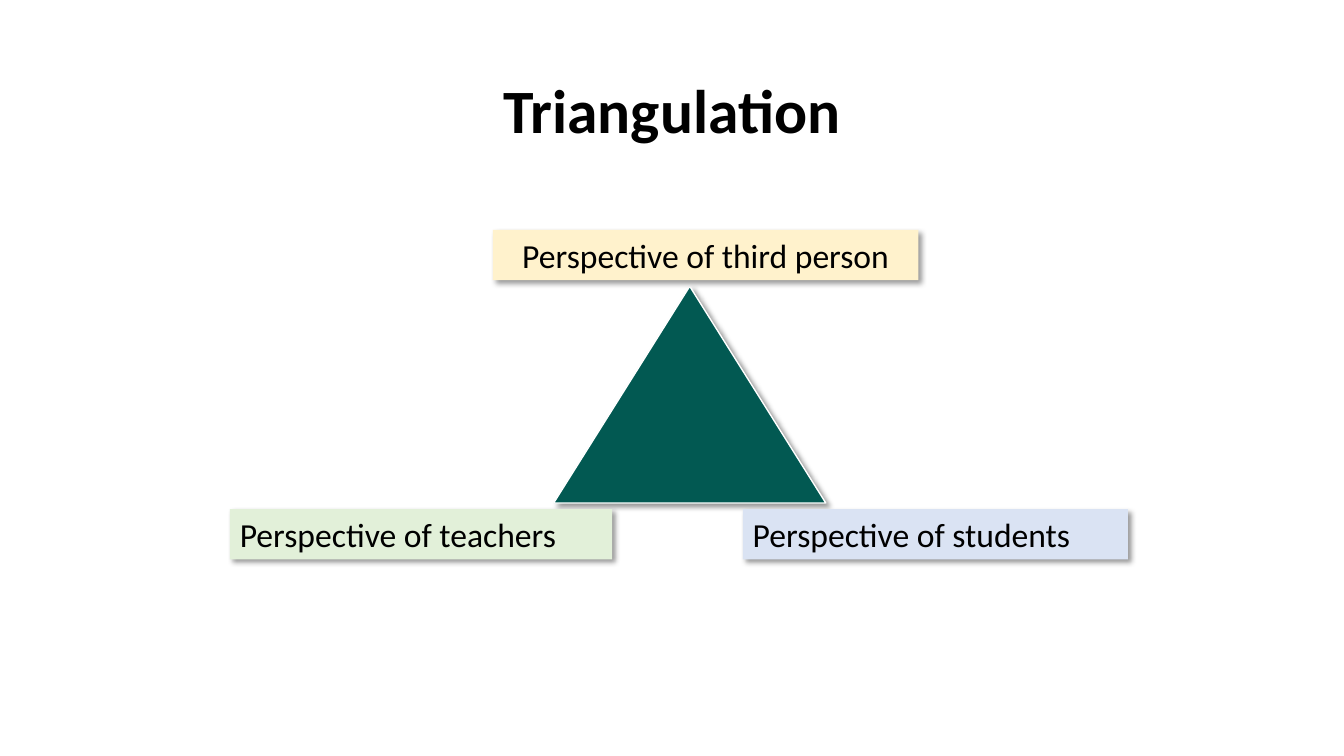
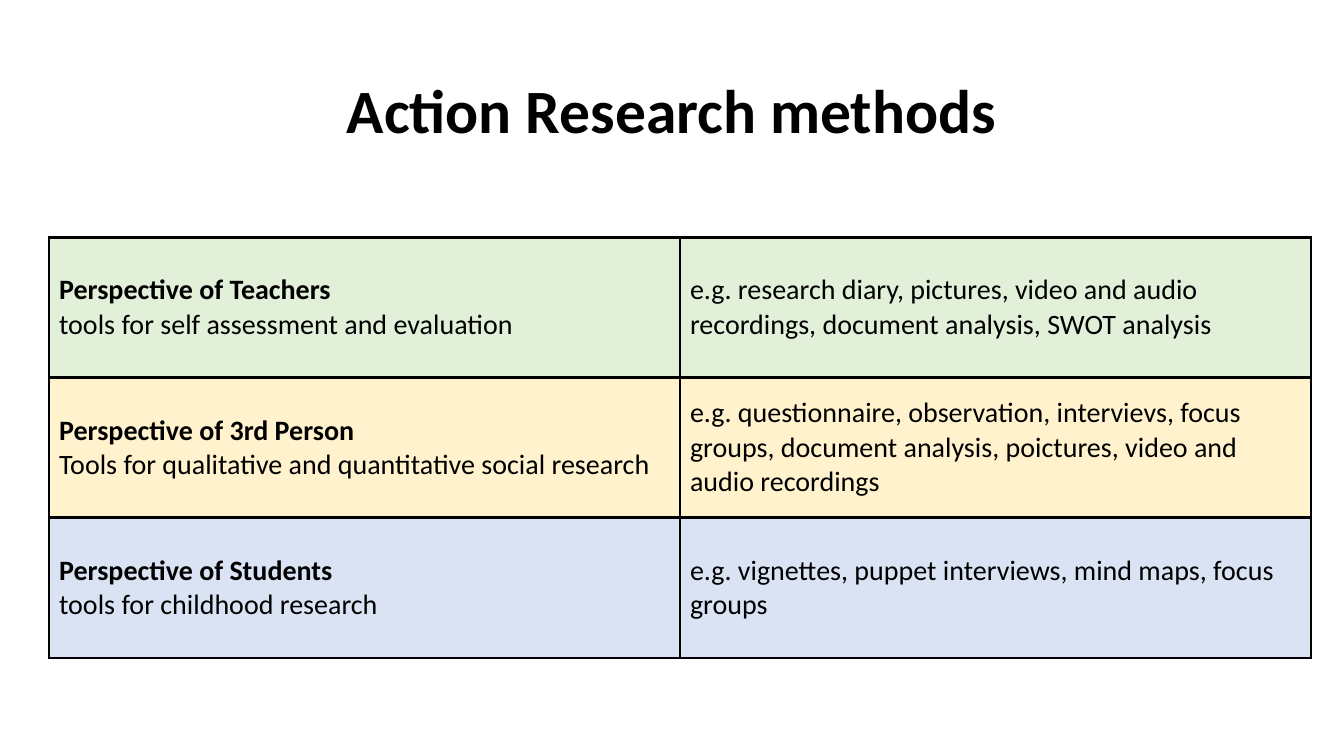
from lxml import etree
from pptx import Presentation
from pptx.dml.color import RGBColor
from pptx.enum.shapes import MSO_SHAPE
from pptx.enum.text import MSO_ANCHOR, MSO_AUTO_SIZE, PP_ALIGN
from pptx.oxml import parse_xml
from pptx.oxml.ns import nsdecls, qn
from pptx.util import Pt

RECTANGLE, TRIANGLE = MSO_SHAPE.RECTANGLE, MSO_SHAPE.ISOSCELES_TRIANGLE
TOP, MIDDLE = MSO_ANCHOR.TOP, MSO_ANCHOR.MIDDLE
LEFT, CENTER = PP_ALIGN.LEFT, PP_ALIGN.CENTER

BLACK = RGBColor(0x00, 0x00, 0x00)
WHITE = RGBColor(0xFF, 0xFF, 0xFF)
TEAL = RGBColor(0x02, 0x59, 0x52)
TEACHER_GREEN = RGBColor(0xE2, 0xF0, 0xD9)
STUDENT_BLUE = RGBColor(0xDA, 0xE3, 0xF3)
THIRD_PERSON_YELLOW = RGBColor(0xFF, 0xF2, 0xCC)

FONT = "Calibri"
TITLE_ONLY = 5
BORDER_WIDTH = Pt(2.2)
SHADOW = (
    f'<a:outerShdw {nsdecls("a")} blurRad="{Pt(4)}" dist="{Pt(3)}" dir="2700000" '
    'algn="tl" rotWithShape="0"><a:srgbClr val="000000"><a:alpha val="40000"/>'
    "</a:srgbClr></a:outerShdw>"
)


def write(para, text, size=20, bold=False, align=LEFT):
    """Add text to a paragraph as one formatted span."""
    para.alignment = align
    span = para.add_run()
    span.text = text
    span.font.name = FONT
    span.font.size = Pt(size)
    span.font.bold = bold
    span.font.color.rgb = BLACK


def add_titled_slide(title_text):
    page = deck.slides.add_slide(deck.slide_layouts[TITLE_ONLY])
    title = page.shapes.title
    title.left, title.top, title.width, title.height = Pt(66), Pt(28.8), Pt(828), Pt(104.4)
    frame = title.text_frame
    frame.auto_size = MSO_AUTO_SIZE.NONE
    frame.vertical_anchor = MIDDLE
    frame.paragraphs[0].line_spacing = 0.9
    write(frame.paragraphs[0], title_text, size=44, bold=True, align=CENTER)
    return page


deck = Presentation()
deck.slide_width, deck.slide_height = Pt(960), Pt(540)

# Triangulation diagram
page = add_titled_slide("Triangulation")
diagram = page.shapes.add_group_shape()

triangle = diagram.shapes.add_shape(TRIANGLE, Pt(395.5), Pt(204.5), Pt(194.4), Pt(154.8))
triangle.fill.solid()
triangle.fill.fore_color.rgb = TEAL
triangle.line.color.rgb = WHITE
triangle.line.width = Pt(1)

labels = [
    ("Perspective of teachers", 164.2, 363.6, 273, TEACHER_GREEN, LEFT),
    ("Perspective of students", 530.6, 363.6, 275, STUDENT_BLUE, LEFT),
    ("Perspective of third person", 352.1, 164.2, 304, THIRD_PERSON_YELLOW, CENTER),
]
for text, left, top, width, color, align in labels:
    box = diagram.shapes.add_shape(RECTANGLE, Pt(left), Pt(top), Pt(width), Pt(36))
    box.fill.solid()
    box.fill.fore_color.rgb = color
    box.line.fill.background()
    box.text_frame.word_wrap = True
    box.text_frame.vertical_anchor = TOP
    write(box.text_frame.paragraphs[0], text, size=24, align=align)

for shape in diagram.shapes:
    shape.shadow.inherit = False
    shape._element.spPr.find(qn("a:effectLst")).append(parse_xml(SHADOW))

# Table of methods
page = add_titled_slide("Action Research methods")
methods = [
    ("Perspective of Teachers", "tools for self assessment and evaluation",
     "e.g. research diary, pictures, video and audio recordings, document analysis, "
     "SWOT analysis", TEACHER_GREEN),
    ("Perspective of 3rd Person", "Tools for qualitative and quantitative social research",
     "e.g. questionnaire, observation, intervievs, focus groups, document analysis, "
     "poictures, video and audio recordings", THIRD_PERSON_YELLOW),
    ("Perspective of Students", "tools for childhood research",
     "e.g. vignettes, puppet interviews, mind maps, focus groups", STUDENT_BLUE),
]
table = page.shapes.add_table(
    len(methods), 2, Pt(35), Pt(169.5), Pt(901.4), Pt(300.6)).table
table.first_row = False
table.horz_banding = False

for row, (perspective, tools, examples, color) in enumerate(methods):
    for column in range(2):
        cell = table.cell(row, column)
        cell.vertical_anchor = MIDDLE
        properties = cell._tc.get_or_add_tcPr()
        for side in ("a:lnL", "a:lnR", "a:lnT", "a:lnB"):
            border = etree.SubElement(properties, qn(side), w=str(BORDER_WIDTH))
            fill = etree.SubElement(border, qn("a:solidFill"))
            etree.SubElement(fill, qn("a:srgbClr"), val=str(BLACK))
        cell.fill.solid()
        cell.fill.fore_color.rgb = color
    frame = table.cell(row, 0).text_frame
    write(frame.paragraphs[0], perspective, bold=True)
    write(frame.add_paragraph(), tools)
    write(table.cell(row, 1).text_frame.paragraphs[0], examples)

deck.save("out.pptx")
